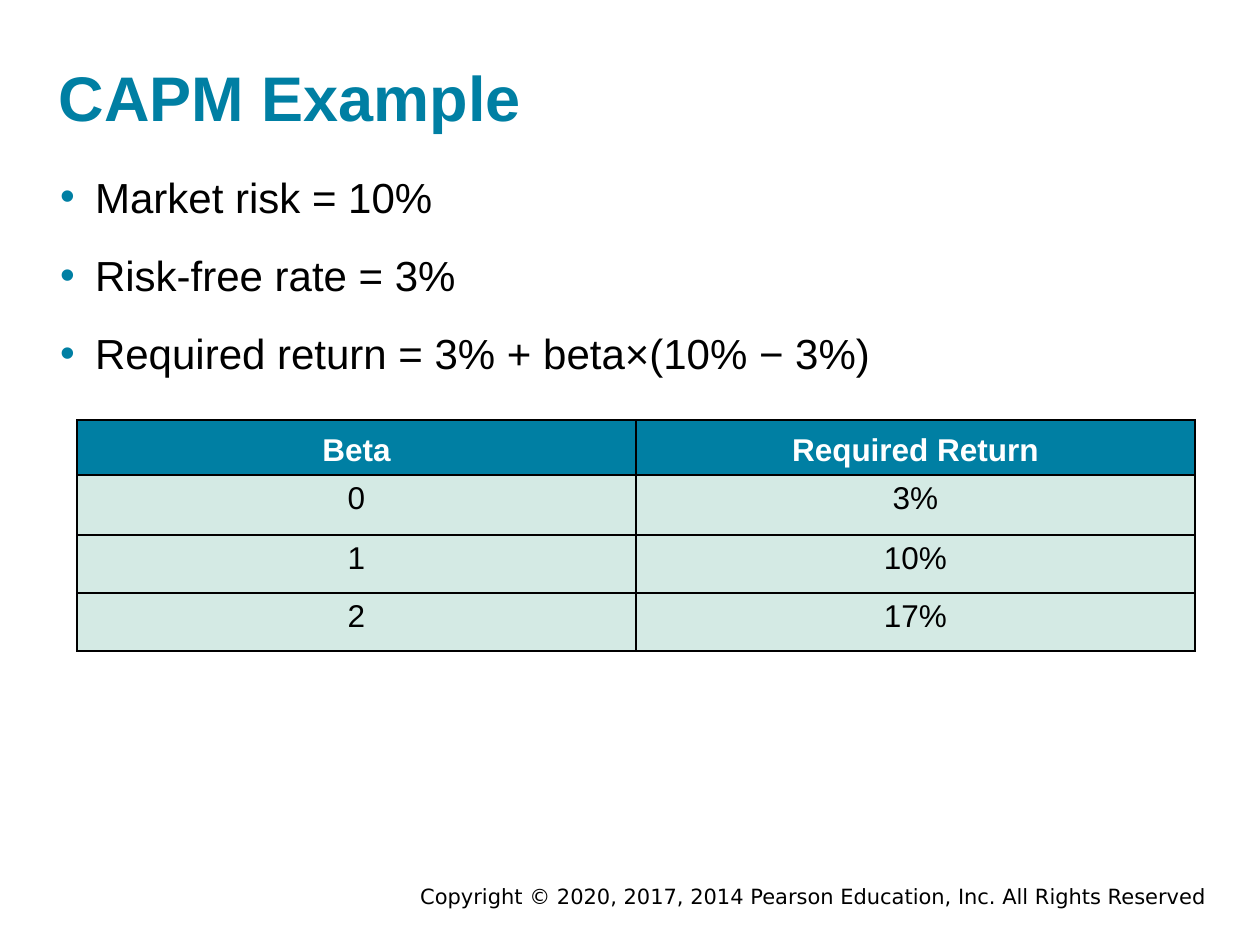
"""Build the CAPM example slide with its assumptions and required returns table."""
from dataclasses import dataclass

from lxml.etree import SubElement
from pptx import Presentation
from pptx.dml.color import RGBColor
from pptx.enum.text import MSO_ANCHOR as Anchor, MSO_AUTO_SIZE as AutoSize, PP_ALIGN as Align
from pptx.oxml.ns import qn
from pptx.util import Emu, Pt


@dataclass(frozen=True)
class Theme:
    teal: str = "007FA3"
    mint: str = "D4EAE4"
    black: str = "000000"
    white: str = "FFFFFF"
    font: str = "Arial"
    footer_font: str = "DejaVu Sans"
    title_size: int = 36
    body_size: int = 24
    table_size: int = 18
    footer_size: int = 12


theme = Theme()
PX = 914400 / 126


def px(*lengths):
    return [Emu(round(length * PX)) for length in lengths]


def add_run(paragraph, text, size, color, bold=False, font=theme.font):
    run = paragraph.add_run()
    run.text = text
    run.font.name = font
    run.font.size = Pt(size)
    run.font.bold = bold
    run.font.color.rgb = RGBColor.from_string(color)


presentation = Presentation()
presentation.slide_width, presentation.slide_height = px(1260, 945)
slide = presentation.slides.add_slide(presentation.slide_layouts[1])
title, body = slide.placeholders
copyright_box = slide.shapes.add_textbox(*px(232, 877, 987, 38))

for shape, box, anchor in (
    (title, (59, 57, 1134, 77), Anchor.BOTTOM),
    (body, (60, 168, 1134, 210), Anchor.TOP),
):
    shape.left, shape.top, shape.width, shape.height = px(*box)
    frame = shape.text_frame
    frame.margin_left = frame.margin_top = frame.margin_right = frame.margin_bottom = 0
    frame.vertical_anchor = anchor
    frame.word_wrap = True
    frame.auto_size = AutoSize.SHAPE_TO_FIT_TEXT

paragraph = title.text_frame.paragraphs[0]
paragraph.alignment = Align.LEFT
add_run(paragraph, "CAPM Example", theme.title_size, theme.teal, bold=True)

body.text_frame.margin_top = px(3)[0]
assumptions = (
    "Market risk = 10%",
    "Risk-free rate = 3%",
    "Required return = 3% + beta×(10% − 3%)",
)
indent = px(35)[0]
for index, text in enumerate(assumptions):
    paragraph = body.text_frame.paragraphs[0] if index == 0 else body.text_frame.add_paragraph()
    properties = paragraph._p.get_or_add_pPr()
    properties.set("marL", str(indent))
    properties.set("indent", str(-indent))
    bullet_color = SubElement(properties, qn("a:buClr"))
    SubElement(bullet_color, qn("a:srgbClr"), val=theme.teal)
    SubElement(properties, qn("a:buFont"), typeface=theme.font)
    SubElement(properties, qn("a:buChar"), char="•")
    paragraph.space_before = Pt(16 if index else 0)
    add_run(paragraph, text, theme.body_size, theme.black)

rows = (("Beta", "Required Return"), ("0", "3%"), ("1", "10%"), ("2", "17%"))
row_heights = px(55, 60, 58, 58)
table = slide.shapes.add_table(len(rows), 2, *px(77, 420, 1118, 231)).table
table.horz_banding = False
for column in table.columns:
    column.width = px(559)[0]
for row_index, (values, height) in enumerate(zip(rows, row_heights)):
    table.rows[row_index].height = height
    header = row_index == 0
    for column_index, text in enumerate(values):
        cell = table.cell(row_index, column_index)
        cell.vertical_anchor = Anchor.BOTTOM if header else Anchor.TOP
        cell_properties = cell._tc.get_or_add_tcPr()
        for side in ("a:lnL", "a:lnR", "a:lnT", "a:lnB"):
            border = SubElement(cell_properties, qn(side), w=str(Pt(1)))
            border_fill = SubElement(border, qn("a:solidFill"))
            SubElement(border_fill, qn("a:srgbClr"), val=theme.black)
        cell.fill.solid()
        cell.fill.fore_color.rgb = RGBColor.from_string(theme.teal if header else theme.mint)
        paragraph = cell.text_frame.paragraphs[0]
        paragraph.alignment = Align.CENTER
        add_run(paragraph, text, theme.table_size, theme.white if header else theme.black, bold=header)

copyright_box.text_frame.word_wrap = True
copyright_box.text_frame.auto_size = AutoSize.SHAPE_TO_FIT_TEXT
paragraph = copyright_box.text_frame.paragraphs[0]
paragraph.alignment = Align.RIGHT
add_run(
    paragraph,
    "Copyright © 2020, 2017, 2014 Pearson Education, Inc. All Rights Reserved",
    theme.footer_size,
    theme.black,
    font=theme.footer_font,
)

presentation.save("out.pptx")
